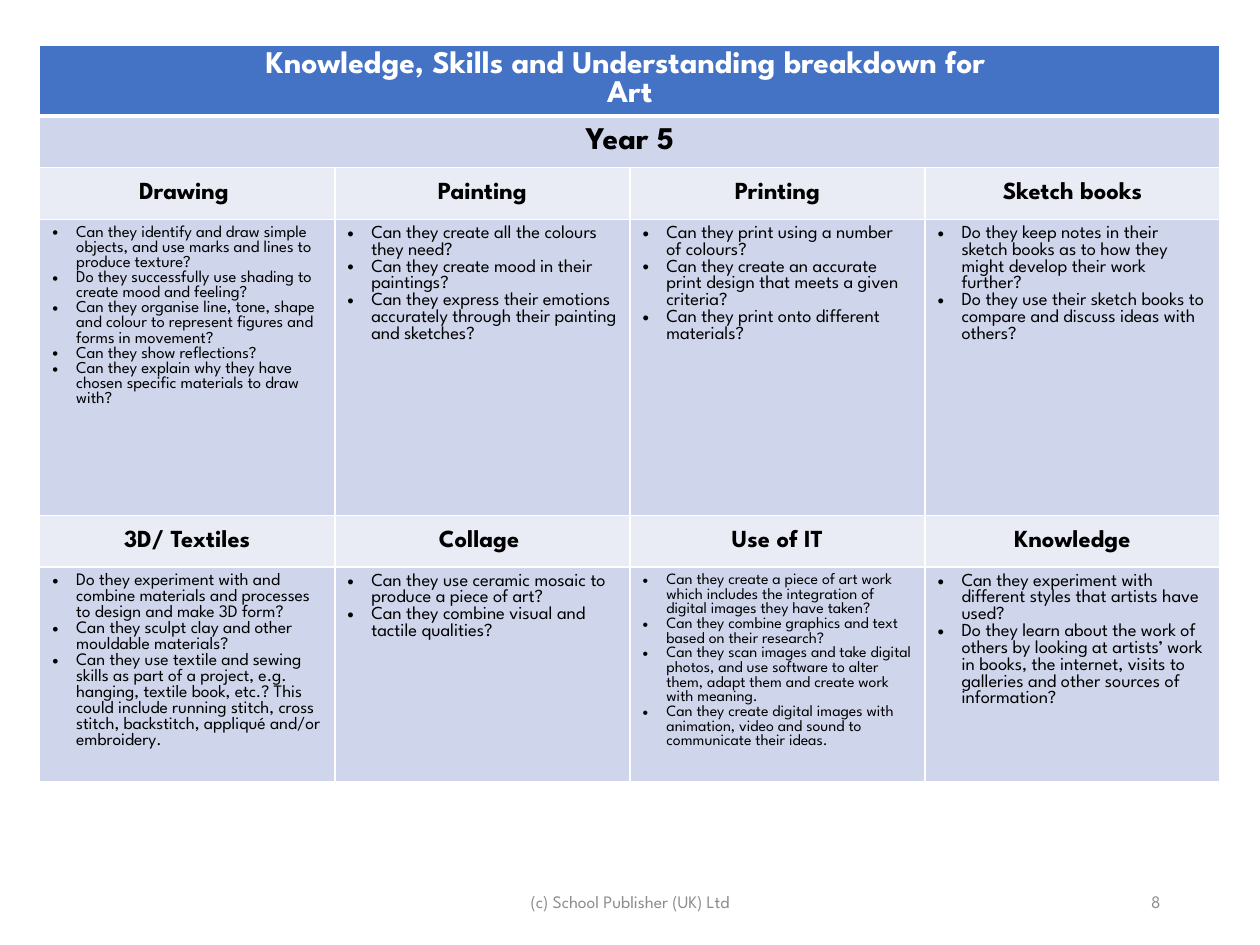
from dataclasses import dataclass

from lxml.etree import SubElement
from pptx import Presentation
from pptx.dml.color import RGBColor
from pptx.enum.text import MSO_ANCHOR as Anchor, PP_ALIGN as Align
from pptx.oxml.ns import qn
from pptx.util import Inches, Pt

FONT = "League Spartan"
WHITE = RGBColor(0xFF, 0xFF, 0xFF)
BLACK = RGBColor(0, 0, 0)
GREY = RGBColor(0x8C, 0x8C, 0x8C)
BLUE = RGBColor(0x44, 0x72, 0xC4)
BAND = RGBColor(0xCF, 0xD5, 0xEA)
PALE = RGBColor(0xE9, 0xEB, 0xF5)

WIDTH, HEIGHT = Inches(10), Inches(7.5)
COLS = 4
TABLE_SHARE = 0.937
TABLE_TOP = 0.048
LINE_ROW = 0.41
ROW_HEIGHTS = [LINE_ROW, LINE_ROW, LINE_ROW, 2.35, LINE_ROW, 1.7]


@dataclass
class Style:
    size: float
    color: RGBColor = BLACK
    bold: bool = False
    align: Align = Align.CENTER


@dataclass
class CellLook:
    fill: RGBColor
    anchor: Anchor
    margin_x: float
    margin_y: float
    top: float = 1
    bottom: float = 1


@dataclass
class Topic:
    name: str
    size: float
    questions: list[str]


@dataclass
class Footer:
    text: str
    left: float
    width: float
    align: Align


TITLE_LOOK = CellLook(BLUE, Anchor.TOP, 0.1, 0.05, bottom=3)
YEAR_LOOK = CellLook(BAND, Anchor.MIDDLE, 0.1, 0.05, top=3)
NAME_LOOK = CellLook(PALE, Anchor.MIDDLE, 0.07, 0)
BODY_LOOK = CellLook(BAND, Anchor.TOP, 0.1, 0.05)

TOPICS = [
    Topic("Drawing ", 9.5, [
        "Can they identify and draw simple objects, and use marks and lines to produce texture?",
        "Do they successfully use shading to create mood and feeling?",
        "Can they organise line, tone, shape and colour to represent figures and forms in movement?",
        "Can they show reflections?",
        "Can they explain why they have chosen specific materials to draw with?"]),
    Topic("Painting", 10.5, [
        "Can they create all the colours they need?",
        "Can they create mood in their paintings?",
        "Can they express their emotions accurately through their painting and sketches?"]),
    Topic("Printing", 10.5, [
        "Can they print using a number of colours?",
        "Can they create an accurate print design that meets a given criteria?",
        "Can they print onto different materials?"]),
    Topic("Sketch books", 10.5, [
        "Do they keep notes in their sketch books as to how they might develop their work further?",
        "Do they use their sketch books to compare and discuss ideas with others?"]),
    Topic("3D/ Textiles", 10, [
        "Do they experiment with and combine materials and processes to design and make 3D form?",
        "Can they sculpt clay and other mouldable materials?",
        "Can they use textile and sewing skills as part of a project, e.g. hanging, textile book, "
        "etc.? This could include running stitch, cross stitch, backstitch, appliqué and/or "
        "embroidery."]),
    Topic("Collage ", 10.5, [
        "Can they use ceramic mosaic to produce a piece of art?",
        "Can they combine visual and tactile qualities?"]),
    Topic("Use of IT", 9, [
        "Can they create a piece of art work which includes the integration of digital images "
        "they have taken?",
        "Can they combine graphics and text based on their research?",
        "Can they scan images and take digital photos, and use software to alter them, adapt them "
        "and create work with meaning.",
        "Can they create digital images with animation, video and sound to communicate their "
        "ideas."]),
    Topic("Knowledge", 10.5, [
        "Can they experiment with different styles that artists have used?",
        "Do they learn about the work of others by looking at artists’ work in books, the "
        "internet, visits to galleries and other sources of information?"]),
]

FOOTERS = [
    Footer("8", 0.706, 0.225, Align.RIGHT),
    Footer("(c) School Publisher (UK) Ltd", 0.331, 0.338, Align.CENTER),
]


def add_bullet(p) -> None:
    pPr = p._p.get_or_add_pPr()
    pPr.set("marL", str(Inches(0.19)))
    pPr.set("indent", str(-Inches(0.19)))
    SubElement(pPr, qn("a:buFont"), typeface="Arial")
    SubElement(pPr, qn("a:buChar"), char="•")


def write(tf, lines: list[str], style: Style, bullets: bool = False) -> None:
    for i, line in enumerate(lines):
        p = tf.add_paragraph() if i else tf.paragraphs[0]
        p.alignment = style.align
        if bullets:
            add_bullet(p)
        r = p.add_run()
        r.text = line
        font = {"name": FONT, "size": Pt(style.size), "bold": style.bold}
        for key, value in font.items():
            setattr(r.font, key, value)
        r.font.color.rgb = style.color


def format_cell(cell, look: CellLook) -> None:
    tcPr = cell._tc.get_or_add_tcPr()
    for side, width in {"L": 1, "R": 1, "T": look.top, "B": look.bottom}.items():
        ln = SubElement(tcPr, qn(f"a:ln{side}"), w=str(Pt(width)))
        SubElement(SubElement(ln, qn("a:solidFill")), qn("a:srgbClr"), val=str(WHITE))
    cell.fill.solid()
    cell.fill.fore_color.rgb = look.fill
    layout = {
        "vertical_anchor": look.anchor,
        "margin_left": Inches(look.margin_x),
        "margin_right": Inches(look.margin_x),
        "margin_top": Inches(look.margin_y),
        "margin_bottom": Inches(look.margin_y),
    }
    for key, value in layout.items():
        setattr(cell, key, value)


def add_banner(table, row: int, lines: list[str], look: CellLook, color: RGBColor) -> None:
    for col in range(COLS):
        format_cell(table.cell(row, col), look)
    table.cell(row, 0).merge(table.cell(row, COLS - 1))
    write(table.cell(row, 0).text_frame, lines, Style(18, color, True))


def add_topic(table, index: int, topic: Topic) -> None:
    group, col = divmod(index, COLS)
    head, body = (table.cell(2 + 2 * group + k, col) for k in range(2))
    format_cell(head, NAME_LOOK)
    write(head.text_frame, [topic.name], Style(14, bold=True))
    format_cell(body, BODY_LOOK)
    write(body.text_frame, topic.questions, Style(topic.size, align=Align.LEFT), True)


def add_breakdown(s) -> None:
    width = int(WIDTH * TABLE_SHARE)
    table = s.shapes.add_table(
        len(ROW_HEIGHTS), COLS, (WIDTH - width) // 2, int(HEIGHT * TABLE_TOP),
        width, Inches(sum(ROW_HEIGHTS))).table
    table.horz_banding = False
    for row, height in zip(table.rows, ROW_HEIGHTS):
        row.height = Inches(height)
    title = ["Knowledge, Skills and Understanding breakdown for ", "Art"]
    add_banner(table, 0, title, TITLE_LOOK, WHITE)
    add_banner(table, 1, ["Year 5"], YEAR_LOOK, BLACK)
    for index, topic in enumerate(TOPICS):
        add_topic(table, index, topic)


def add_footer(s, footer: Footer) -> None:
    sp = s.shapes.add_textbox(
        int(WIDTH * footer.left), int(HEIGHT * 0.927),
        int(WIDTH * footer.width), Inches(0.4))
    tf = sp.text_frame
    tf.word_wrap = True
    tf.vertical_anchor = Anchor.MIDDLE
    write(tf, [footer.text], Style(10, GREY, align=footer.align))


def main() -> None:
    prs = Presentation()
    prs.slide_width, prs.slide_height = WIDTH, HEIGHT
    s = prs.slides.add_slide(prs.slide_layouts[6])
    add_breakdown(s)
    for footer in FOOTERS:
        add_footer(s, footer)
    prs.save("out.pptx")


if __name__ == "__main__":
    main()
